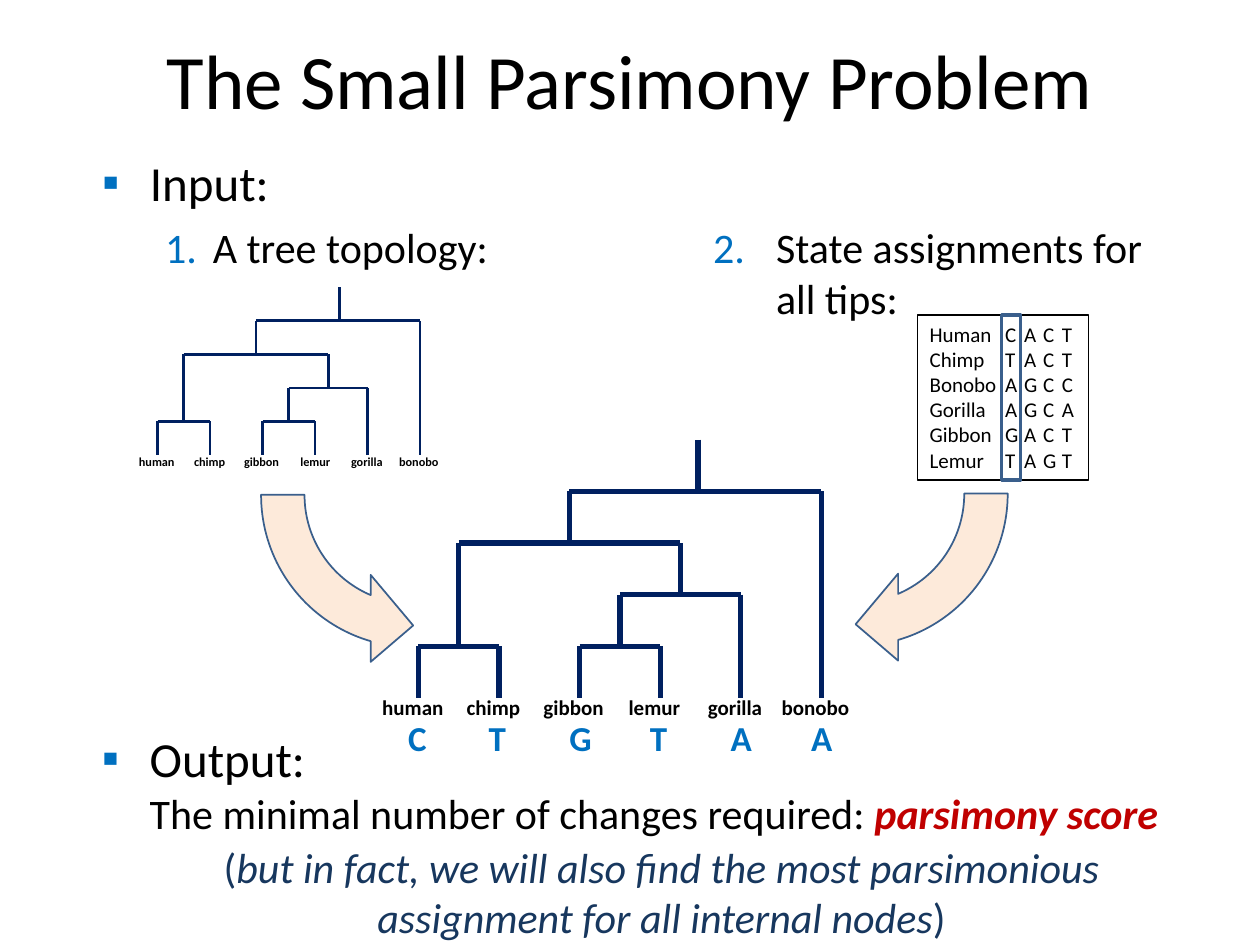
import pptx
import pptx.util
import pptx.dml.color
import pptx.enum.shapes
import pptx.enum.text
from pptx.util import Inches, Pt
from pptx.oxml.ns import qn
from lxml import etree

FONT = "Calibri"
BLACK, BLUE, NAVY, RED = "000000", "0070C0", "002060", "C00000"
STEEL, PEACH, DARK_BLUE = "3A5F8C", "FDEADA", "17375E"
SHAPES = pptx.enum.shapes.MSO_SHAPE
ALIGN = pptx.enum.text.PP_ALIGN

# Content: runs are strings or (text, format) pairs
TITLE = "The Small Parsimony Problem"
SCORE = ["Output:\n",
         ("The minimal number of changes required: ", {"size": 24}),
         ("parsimony score", {"size": 24, "color": RED, "bold": True, "italic": True})]
REMARK = ["(",
          ("but in fact, we will also find the most parsimonious\n"
           "assignment for all internal nodes", {"italic": True}),
          ")"]
SPECIES = ["human", "chimp", "gibbon", "lemur", "gorilla", "bonobo"]
STATES = "CTGTAA"
# Names narrower than three tab steps need a second tab to reach the first column
ALIGNMENT = [("Human\t", "CACT"), ("Chimp\t\t", "TACT"), ("Bonobo\t", "AGCC"),
             ("Gorilla\t\t", "AGCA"), ("Gibbon\t", "GACT"), ("Lemur\t\t", "TAGT")]
TAB_STEP = 0.15
TOPOLOGY = (((0, 1), ((2, 3), 4)), 5)  # leaves are indexes into SPECIES
LEVELS = 5
SMALL_TREE = {"left": 1.25, "top": 2.28, "step": 0.417, "level": 0.266, "weight": 1.5,
              "size": 7, "shift": 0.07, "rise": 0.05, "label_height": 0.28,
              "widths": [0.63, 0.59, 0.63, 0.57, 0.6, 0.67]}
LARGE_TREE = {"left": 3.32, "top": 3.49, "step": 0.64, "level": 0.41, "weight": 3,
              "size": 12, "shift": -0.04, "rise": 0.08, "label_height": 0.3,
              "widths": [0.69, 0.63, 0.69, 0.62, 0.64, 0.75]}
ARROWS = [(5.41, 2.54, 90, False), (1.9, 2.55, 270, True)]
ARROW_ADJUSTMENTS = [0.125, 11.423, 204.577, 161.913, 0.125]


def rgb(color):
    return pptx.dml.color.RGBColor.from_string(color)


def inches(*lengths):
    return [Inches(length) for length in lengths]


def add_text(frame, runs, size=12, color=BLACK, bold=False, italic=False,
             align=ALIGN.LEFT, after=0, level=0, margin=0, indent=0,
             bullet=None, number=None, tab_step=None):
    """Append one paragraph to the frame, filling the first one if it is empty."""
    first = frame.paragraphs[0]
    paragraph = frame.add_paragraph() if first.runs else first
    paragraph.alignment, paragraph.level = align, level
    paragraph.space_before, paragraph.space_after = Pt(0), Pt(after)
    properties = paragraph._p.get_or_add_pPr()
    properties.set("marL", str(Inches(margin)))
    properties.set("indent", str(Inches(indent)))
    if tab_step:
        properties.set("defTabSz", str(Inches(tab_step)))
    if bullet or number:
        bullet_color = etree.SubElement(properties, qn("a:buClr"))
        etree.SubElement(bullet_color, qn("a:srgbClr"), val=BLUE)
    if bullet:
        etree.SubElement(properties, qn("a:buFont"), typeface="Arial")
        etree.SubElement(properties, qn("a:buChar"), char=bullet)
    elif number:
        etree.SubElement(properties, qn("a:buAutoNum"), type="arabicPeriod", startAt=str(number))
    else:
        etree.SubElement(properties, qn("a:buNone"))
    for item in [runs] if isinstance(runs, str) else runs:
        text, changes = (item, {}) if isinstance(item, str) else item
        style = {"size": size, "color": color, "bold": bold, "italic": italic, **changes}
        for index, line in enumerate(text.split("\n")):
            if index:
                paragraph.add_line_break()
            if line:
                run = paragraph.add_run()
                run.text = line
                run.font.name, run.font.size = FONT, Pt(style["size"])
                run.font.bold, run.font.italic = style["bold"], style["italic"]
                run.font.color.rgb = rgb(style["color"])


def add_box(shapes, left, top, width, height, right_inset=0.1):
    frame = shapes.add_textbox(*inches(left, top, width, height)).text_frame
    frame.word_wrap = True
    frame.margin_right = Inches(right_inset)
    return frame


def place(placeholder, *box):
    placeholder.left, placeholder.top, placeholder.width, placeholder.height = inches(*box)
    placeholder.text_frame.auto_size = pptx.enum.text.MSO_AUTO_SIZE.NONE
    return placeholder.text_frame


def add_shape(shapes, kind, box, line, weight, fill=None):
    shape = shapes.add_shape(kind, *inches(*box))
    shape.shadow.inherit = False
    shape.line.color.rgb, shape.line.width = rgb(line), Pt(weight)
    if fill:
        shape.fill.solid()
        shape.fill.fore_color.rgb = rgb(fill)
    else:
        shape.fill.background()
    return shape


def add_tree(shapes, tree):
    """Draw the topology and its species labels."""
    bottom = tree["top"] + LEVELS * tree["level"]

    def line(x1, height1, x2, height2):
        connector = shapes.add_connector(
            pptx.enum.shapes.MSO_CONNECTOR.STRAIGHT,
            *inches(tree["left"] + x1 * tree["step"], bottom - height1 * tree["level"],
                    tree["left"] + x2 * tree["step"], bottom - height2 * tree["level"]))
        connector.line.color.rgb, connector.line.width = rgb(NAVY), Pt(tree["weight"])
        etree.SubElement(connector.element.spPr, qn("a:effectLst"))

    def branch(node):
        if isinstance(node, int):
            return node, 0
        children = [branch(child) for child in node]
        height = 1 + max(child_height for _, child_height in children)
        for x, child_height in children:
            line(x, height, x, child_height)
        (x1, _), (x2, _) = children
        line(x1, height, x2, height)
        return (x1 + x2) / 2, height

    root_x, root_height = branch(TOPOLOGY)
    line(root_x + 0.03, LEVELS, root_x + 0.03, root_height)
    for index, (name, width) in enumerate(zip(SPECIES, tree["widths"])):
        left = tree["left"] + index * tree["step"] + tree["shift"] - width / 2
        frame = add_box(shapes, left, bottom - tree["rise"], width, tree["label_height"],
                        right_inset=0)
        add_text(frame, name, size=tree["size"], bold=True)


presentation = pptx.Presentation()
presentation.slide_width, presentation.slide_height = inches(10, 7.5)
slide = presentation.slides.add_slide(presentation.slide_layouts[3])
title, topology_body, states_body = slide.placeholders

# Title and input lists
frame = place(title, 0, 0, 10, 1.25)
frame.vertical_anchor = pptx.enum.text.MSO_ANCHOR.MIDDLE
add_text(frame, TITLE, size=44, align=ALIGN.CENTER)
frame = place(topology_body, 0.71, 1.16, 3.98, 1.37)
add_text(frame, "Input:", size=28, after=6, margin=0.38, indent=-0.38, bullet="▪")
add_text(frame, "A tree topology:", size=24, after=6, level=1, margin=0.88, indent=-0.38, number=1)
frame = place(states_body, 5.06, 1.71, 4.34, 0.85)
add_text(frame, "State assignments for all tips:", size=24, after=6, level=1,
         margin=1, indent=-0.5, number=2)

# Small tree
add_tree(slide.shapes.add_group_shape().shapes, SMALL_TREE)

# Character table of the tips
table_box = add_shape(slide.shapes, SHAPES.RECTANGLE, (7.28, 2.5, 1.36, 1.31), BLACK, 0.75)
frame = table_box.text_frame
frame.word_wrap = True
frame.vertical_anchor = pptx.enum.text.MSO_ANCHOR.TOP
for name, characters in ALIGNMENT:
    add_text(frame, name + "\t".join(characters), tab_step=TAB_STEP)

# Output
frame = add_box(slide.shapes, 0.71, 5.73, 9.08, 0.91)
add_text(frame, SCORE, size=28, after=6, margin=0.38, indent=-0.38, bullet="▪")

# Large tree with states and arrows
group_shapes = slide.shapes.add_group_shape().shapes
add_tree(group_shapes, LARGE_TREE)
for index, state in enumerate(STATES):
    left = LARGE_TREE["left"] - 0.18 + index * LARGE_TREE["step"]
    frame = add_box(group_shapes, left, 5.64, 0.36, 0.44, right_inset=0)
    add_text(frame, state, size=20, color=BLUE, bold=True)
for left, top, rotation, flipped in ARROWS:
    arrow = add_shape(group_shapes, SHAPES.CIRCULAR_ARROW, (left, top, 2.76, 2.76), STEEL, 1, PEACH)
    for index, value in enumerate(ARROW_ADJUSTMENTS):
        arrow.adjustments[index] = value
    arrow.rotation = rotation
    if flipped:
        arrow.element.spPr.find(qn("a:xfrm")).set("flipH", "1")

# Closing remark and highlighted column
frame = add_box(slide.shapes, 0.71, 6.63, 9.08, 0.7)
add_text(frame, REMARK, size=24, color=DARK_BLUE, align=ALIGN.CENTER, after=6)
add_shape(slide.shapes, SHAPES.RECTANGLE, (7.95, 2.5, 0.15, 1.31), STEEL, 2)

presentation.save("out.pptx")
